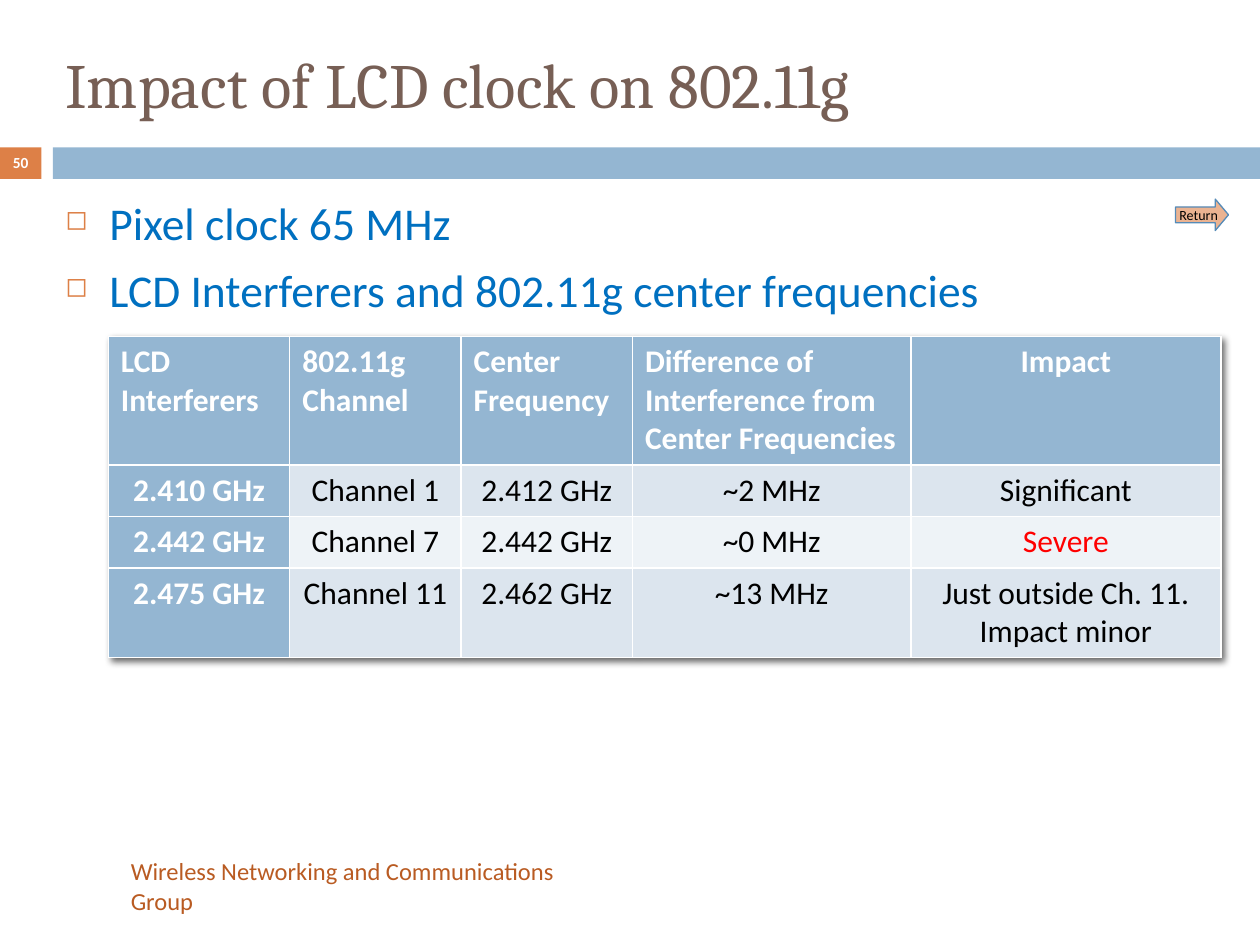
"""Build the slide on how the LCD pixel clock affects 802.11g channels."""
from lxml import etree
from pptx import Presentation
from pptx import util as u
from pptx.dml.color import RGBColor
from pptx.enum import shapes, text
from pptx.oxml.ns import qn

KIND = shapes.MSO_SHAPE
LEFT, MID = text.PP_ALIGN.LEFT, text.PP_ALIGN.CENTER
BLUE, RUST, WHITE, BLACK = "94B6D2", "DD8047", "FFFFFF", "000000"


def color(code):
    return RGBColor.from_string(code)


def inch(*sizes):
    return [u.Inches(size) for size in sizes]


def child(node, tag, **attrs):
    return etree.SubElement(node, qn(tag), attrs)


class Deck:
    def __init__(self, font="Calibri"):
        self.font = font
        self.file = Presentation()
        self.file.slide_width, self.file.slide_height = inch(10, 7.5)
        self.slide = self.file.slides.add_slide(self.file.slide_layouts[6])

    def style(self, para, words, size, ink, bold=False, align=LEFT, font=None):
        para.text = words
        para.alignment = align
        face = para.font
        face.name, face.size, face.bold = font or self.font, u.Pt(size), bold
        face.color.rgb = color(ink)

    def shape(self, box, kind=KIND.RECTANGLE, fill=None, line=None):
        item = self.slide.shapes.add_shape(kind, *inch(*box))
        item.shadow.inherit = False
        if fill:
            item.fill.solid()
            item.fill.fore_color.rgb = color(fill)
        else:
            item.fill.background()
        if line:
            item.line.color.rgb = color(line)
            item.line.width = u.Pt(0.75)
        else:
            item.line.fill.background()
        return item

    def label(self, item, words, size, ink, wrap=True, **looks):
        frame = item.text_frame
        frame.word_wrap = wrap
        frame.vertical_anchor = text.MSO_ANCHOR.MIDDLE
        self.style(frame.paragraphs[0], words, size, ink, **looks)
        return frame

    def box(self, box):
        item = self.slide.shapes.add_textbox(*inch(*box))
        item.text_frame.word_wrap = True
        return item

    def list(self, box, lines, size, ink):
        frame = self.box(box).text_frame
        for row, words in enumerate(lines):
            para = frame.add_paragraph() if row else frame.paragraphs[0]
            props = para._p.get_or_add_pPr()
            props.set("marL", str(u.Inches(0.35)))
            props.set("indent", str(u.Inches(-0.35)))
            child(child(props, "a:buClr"), "a:srgbClr", val=RUST)
            child(props, "a:buSzPct", val="60000")
            child(props, "a:buChar", char="◻")
            if row:
                para.space_before = u.Pt(7)
            self.style(para, words, size, ink)

    def table(self, left, top, wides, highs, rows, inks):
        area = inch(left, top, sum(wides), sum(highs))
        grid = self.slide.shapes.add_table(len(highs), len(wides), *area).table
        for col, wide in zip(grid.columns, wides):
            col.width = u.Inches(wide)
        for y, (high, cells) in enumerate(zip(highs, rows)):
            grid.rows[y].height = u.Inches(high)
            for x, words in enumerate(cells):
                head = y == 0 or x == 0
                cell = grid.cell(y, x)
                cell.fill.solid()
                band = BLUE if head else ("EEF3F7", "DCE5EE")[y % 2]
                cell.fill.fore_color.rgb = color(band)
                ink = WHITE if head else inks.get(words, BLACK)
                align = MID if y or x == len(wides) - 1 else LEFT
                self.style(cell.text_frame.paragraphs[0], words, 18, ink,
                           bold=head, align=align)
        self.shade(grid)

    def shade(self, grid):
        props = grid._tbl.tblPr
        glow = etree.Element(qn("a:effectLst"))
        props.insert(0, glow)
        cast = child(glow, "a:outerShdw", blurRad="50800", dist="38100",
                     dir="2700000", algn="tl", rotWithShape="0")
        tint = child(cast, "a:srgbClr", val=BLACK)
        child(tint, "a:alpha", val="60000")


def main():
    deck = Deck()
    deck.shape((0, 1.17, 0.33, 0.25), fill=RUST)
    deck.shape((0.42, 1.17, 9.58, 0.25), fill=BLUE)
    foot = deck.shape((0.92, 6.83, 4.08, 0.4), KIND.ROUNDED_RECTANGLE)
    deck.label(foot, "Wireless Networking and Communications Group", 14, "B95B22")
    deck.label(deck.box((0.42, 0.25, 9.33, 0.83)),
               "Impact of LCD clock on 802.11g", 36, "775F55", font="Cambria")
    deck.list((0.42, 1.5, 9.33, 5.17),
              ["Pixel clock 65 MHz",
               "LCD Interferers and 802.11g center frequencies"], 26, "0070C0")
    page = deck.label(deck.box((0, 1.15, 0.33, 0.27)), "50", 8.8, WHITE,
                      bold=True, align=MID)
    page.margin_left = page.margin_right = 0
    deck.table(0.86, 2.67, [1.44, 1.36, 1.36, 2.21, 2.46],
               [1.02, 0.41, 0.41, 0.71],
               [["LCD \nInterferers", "802.11g Channel", "Center Frequency",
                 "Difference of Interference from Center Frequencies", "Impact"],
                ["2.410 GHz", "Channel 1", "2.412 GHz", "~2 MHz", "Significant"],
                ["2.442 GHz", "Channel 7", "2.442 GHz", "~0 MHz", "Severe"],
                ["2.475 GHz", "Channel 11", "2.462 GHz", "~13 MHz",
                 "Just outside Ch. 11. Impact minor"]],
               {"Severe": "FF0000"})
    arrow = deck.shape((9.33, 1.58, 0.42, 0.25), KIND.RIGHT_ARROW,
                       "EBB391", "558BB8")
    arrow.adjustments[1] = 0.42
    deck.label(arrow, "Return", 8, BLACK, wrap=False, align=MID)
    deck.file.save("out.pptx")


if __name__ == "__main__":
    main()
